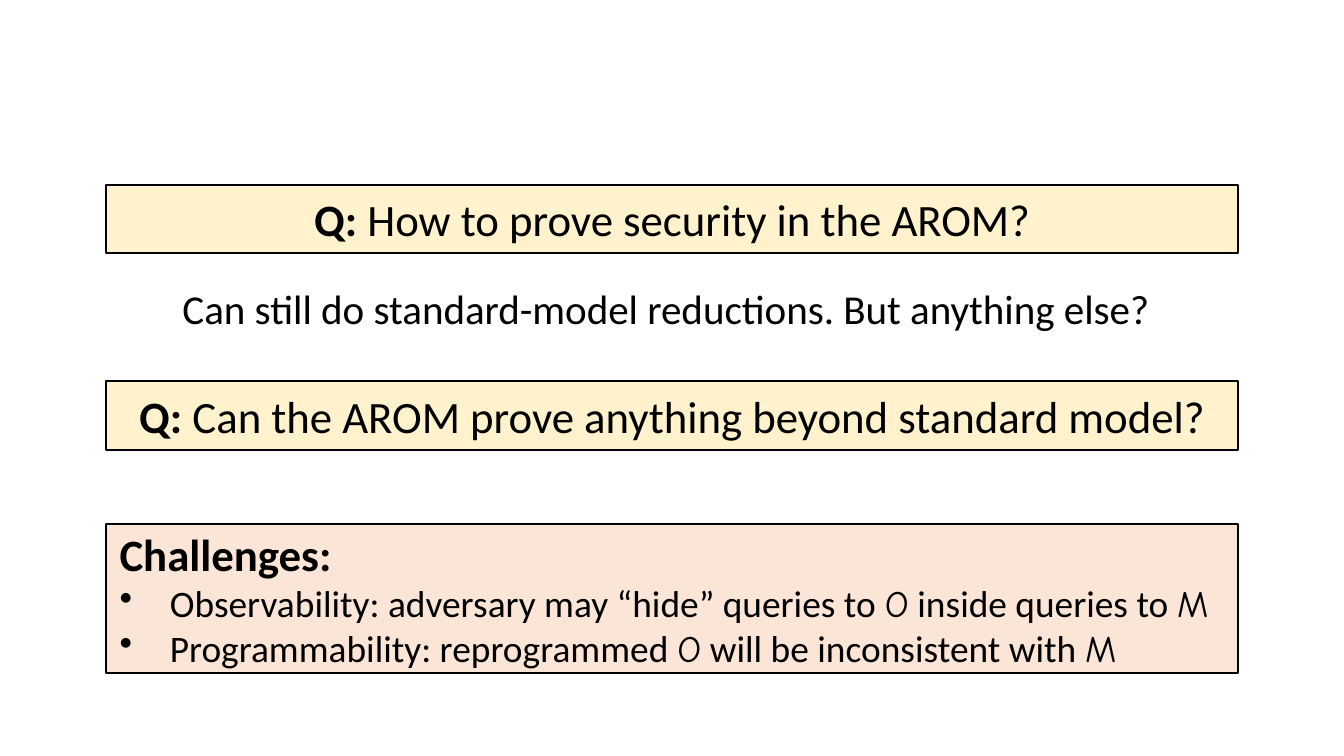
import pptx
import pptx.dml.color
import pptx.enum.shapes
import pptx.enum.text
import pptx.oxml.ns
import pptx.util
from lxml import etree
from pptx.util import Cm

BLACK = pptx.dml.color.RGBColor(0x00, 0x00, 0x00)
CREAM = pptx.dml.color.RGBColor(0xFF, 0xF2, 0xCC)
PEACH = pptx.dml.color.RGBColor(0xFB, 0xE5, 0xD6)
BODY_FONT = "Calibri"
SYMBOL_FONT = "Comic Neue"
ALIGN = pptx.enum.text.PP_ALIGN

LEFT, WIDTH = Cm(2.01), Cm(21.39)
QUESTION_HEIGHT = Cm(1.3)
BULLET_INDENT = Cm(0.95)


def style_paragraph(para, size, align=ALIGN.LEFT):
    para.alignment = align
    para.font.size = pptx.util.Pt(size)
    para.font.color.rgb = BLACK


def add_span(para, text, bold=False, font=BODY_FONT):
    span = para.add_run()
    span.text = text
    span.font.name = font
    span.font.bold = bold


def add_bullet(para):
    """Give the paragraph a round bullet with a hanging indent."""
    properties = para._p.get_or_add_pPr()
    properties.set("marL", str(BULLET_INDENT))
    properties.set("indent", str(-BULLET_INDENT))
    bullet = etree.Element(pptx.oxml.ns.qn("a:buChar"), char="•")
    properties.insert_element_before(bullet, "a:tabLst", "a:defRPr", "a:extLst")


def add_panel(page, left, top, width, height, fill):
    """Add an outlined rectangle and return its text frame."""
    box = page.shapes.add_shape(
        pptx.enum.shapes.MSO_SHAPE.RECTANGLE, left, top, width, height)
    box.shadow.inherit = False
    box.fill.solid()
    box.fill.fore_color.rgb = fill
    box.line.color.rgb = BLACK
    box.line.width = pptx.util.Pt(1)
    frame = box.text_frame
    frame.word_wrap = True
    frame.vertical_anchor = pptx.enum.text.MSO_ANCHOR.MIDDLE
    return frame


def add_question(page, left, top, width, height, question):
    para = add_panel(page, left, top, width, height, CREAM).paragraphs[0]
    style_paragraph(para, 24, ALIGN.CENTER)
    add_span(para, "Q: ", bold=True)
    add_span(para, question)


def add_remark(page, left, top, width, height, remark):
    frame = page.shapes.add_textbox(left, top, width, height).text_frame
    frame.word_wrap = False
    frame.auto_size = pptx.enum.text.MSO_AUTO_SIZE.SHAPE_TO_FIT_TEXT
    para = frame.paragraphs[0]
    style_paragraph(para, 22)
    add_span(para, remark)


def add_challenges(page, left, top, width, height, challenges):
    """Add a headed list; every second part of a challenge is a symbol."""
    frame = add_panel(page, left, top, width, height, PEACH)
    heading = frame.paragraphs[0]
    style_paragraph(heading, 24)
    add_span(heading, "Challenges:", bold=True)
    for parts in challenges:
        para = frame.add_paragraph()
        style_paragraph(para, 20)
        add_bullet(para)
        for index, text in enumerate(parts):
            add_span(para, text, font=SYMBOL_FONT if index % 2 else BODY_FONT)


def main():
    deck = pptx.Presentation()
    deck.slide_width, deck.slide_height = Cm(25.4), Cm(14.29)
    page = deck.slides.add_slide(deck.slide_layouts[6])

    add_question(page, LEFT, Cm(3.49), WIDTH, QUESTION_HEIGHT,
                 "How to prove security in the AROM?")
    add_remark(page, Cm(3.2), Cm(5.23), Cm(19), Cm(1.2),
               "Can still do standard-model reductions. But anything else?")
    add_question(page, LEFT, Cm(7.21), WIDTH, QUESTION_HEIGHT,
                 "Can the AROM prove anything beyond standard model?")
    add_challenges(page, LEFT, Cm(9.91), WIDTH, Cm(2.81), [
        ("Observability: adversary may “hide” queries to ", "O",
         " inside queries to ", "M"),
        ("Programmability: reprogrammed ", "O",
         " will be inconsistent with ", "M"),
    ])
    deck.save("out.pptx")


if __name__ == "__main__":
    main()
